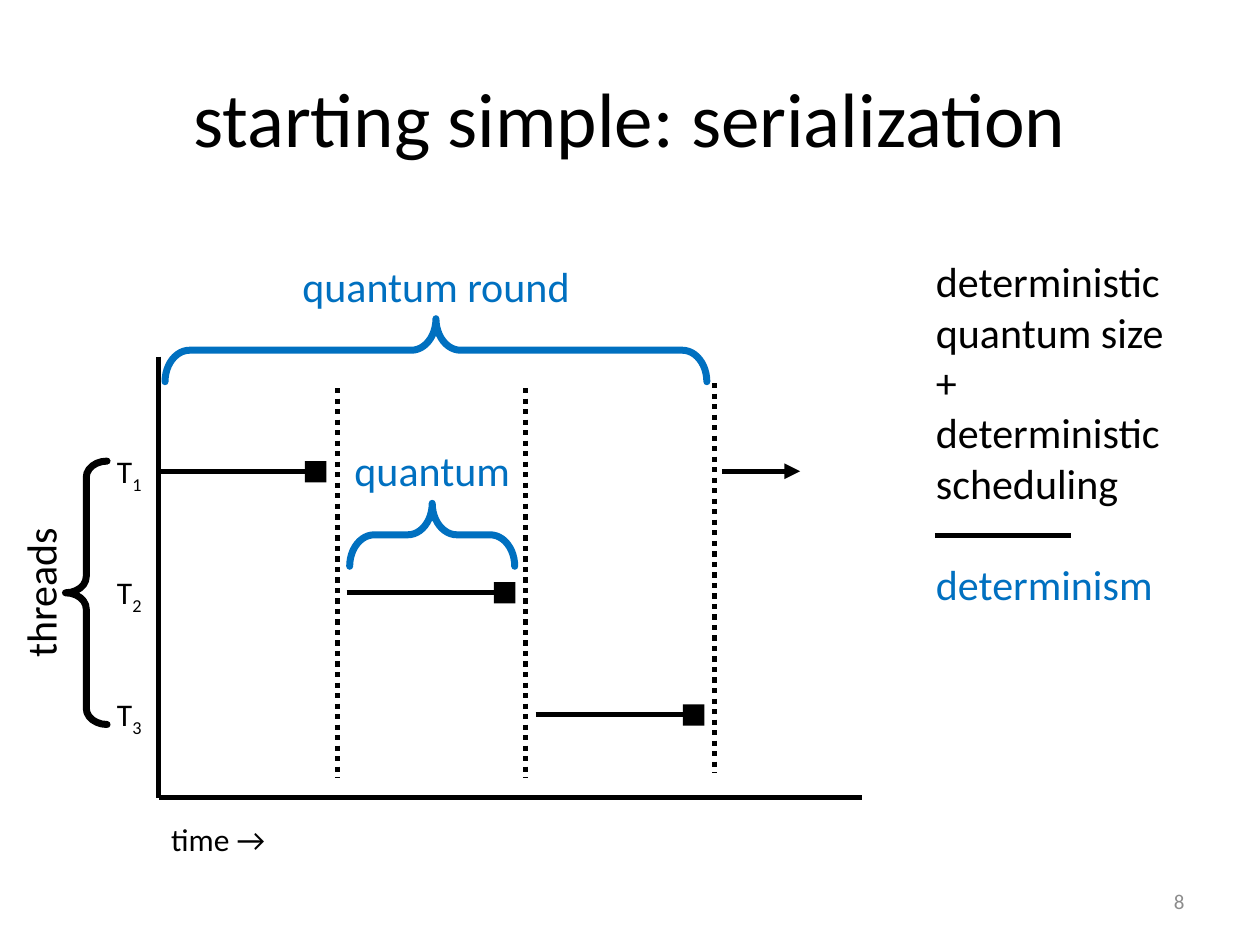
from lxml import etree
from pptx import Presentation
from pptx.dml.color import RGBColor
from pptx.enum import shapes, text
from pptx.oxml.ns import qn
from pptx.util import Pt

SCALE = 9144
BLACK = RGBColor(0x00, 0x00, 0x00)
BLUE = RGBColor(0x00, 0x70, 0xC0)
GRAY = RGBColor(0x8C, 0x8C, 0x8C)
LEFT, MID, RIGHT = text.PP_ALIGN.LEFT, text.PP_ALIGN.CENTER, text.PP_ALIGN.RIGHT


def px(*vals):
    return [val * SCALE for val in vals]


def put(obj, vals):
    for name, val in vals.items():
        setattr(obj, name, val)


class Deck:
    font = "Calibri"

    def __init__(self, wide, high):
        self.prs = Presentation()
        put(self.prs, dict(zip(("slide_width", "slide_height"), px(wide, high))))
        self.slide = self.prs.slides.add_slide(self.prs.slide_layouts[5])
        self.items = self.slide.shapes

    def run(self, para, words, size, color, base=None):
        run = para.add_run()
        run.text = words
        put(run.font, {"name": self.font, "size": Pt(size)})
        run.font.color.rgb = color
        if base:
            run.font._element.set("baseline", str(base))

    def title(self, words, *box):
        shape = self.items.title
        put(shape, dict(zip(("left", "top", "width", "height"), px(*box))))
        shape.text_frame.vertical_anchor = text.MSO_ANCHOR.MIDDLE
        para = shape.text_frame.paragraphs[0]
        para.alignment = MID
        self.run(para, words, 44, BLACK)

    def label(self, box, paras, size, wrap=False, align=LEFT, anchor=text.MSO_ANCHOR.TOP):
        frame = self.items.add_textbox(*px(*box)).text_frame
        put(frame, {"word_wrap": wrap, "vertical_anchor": anchor})
        for num, (words, color, gap, sub) in enumerate(paras):
            para = frame.add_paragraph() if num else frame.paragraphs[0]
            put(para, {"alignment": align, "space_before": Pt(gap)})
            self.run(para, words, size, color)
            if sub:
                self.run(para, sub, size, color, -25000)

    def line(self, x1, y1, x2, y2, dash=None, tail=None):
        line = self.items.add_connector(shapes.MSO_CONNECTOR.STRAIGHT, *px(x1, y1, x2, y2))
        line.line.color.rgb = BLACK
        line.line.width = Pt(3)
        edge = line.line._get_or_add_ln()
        if dash:
            etree.SubElement(edge, qn("a:prstDash")).set("val", dash)
        if tail:
            etree.SubElement(edge, qn("a:tailEnd")).set("type", tail)
        etree.SubElement(line._element.spPr, qn("a:effectLst"))

    def square(self, *box):
        shape = self.items.add_shape(shapes.MSO_SHAPE.RECTANGLE, *px(*box))
        shape.shadow.inherit = False
        shape.fill.solid()
        shape.fill.fore_color.rgb = BLACK
        shape.line.fill.background()

    def brace(self, words, box, color, inset, turn=0):
        shape = self.items.add_shape(shapes.MSO_SHAPE.LEFT_BRACE, *px(*box))
        shape.shadow.inherit = False
        shape.rotation = turn
        shape.adjustments[0] = 0.39
        shape.fill.background()
        shape.line.color.rgb = color
        shape.line.width = Pt(4)
        shape.line._get_or_add_ln().set("cap", "rnd")
        frame = shape.text_frame
        names = ("margin_left", "margin_top", "margin_right", "margin_bottom")
        put(frame, dict(zip(names, px(10, 5, inset, 5))))
        put(frame, {"word_wrap": False, "vertical_anchor": text.MSO_ANCHOR.MIDDLE})
        frame._txBody.bodyPr.set("vert", "vert270")
        para = frame.paragraphs[0]
        para.alignment = MID
        self.run(para, words, 24, color)


def main():
    deck = Deck(1000, 750)
    deck.title("starting simple: serialization", 50, 30, 900, 125)

    deck.brace("quantum", (318, 359, 50, 131), BLUE, 140, 90)
    deck.brace("quantum round", (321, 63, 50, 430), BLUE, 140, 90)
    deck.brace("threads", (52, 366, 33, 209), BLACK, 100)

    for num, y in enumerate((374, 470, 567)):
        x = 125 + 150 * num
        deck.line(x, y, x + 125, y)
        deck.square(x + 117, y - 8, 17, 17)
        deck.label((83, y - 20, 42, 40), [("T", BLACK, 0, str(num + 1))], 18)

    for x, y in ((268, 308), (417, 308), (567, 304)):
        deck.line(x, y, x, y + 309, dash="sysDot")
    deck.line(573, 374, 635, 374, tail="triangle")

    deck.line(126, 283, 126, 633)
    deck.line(126, 633, 684, 633)
    deck.label((126, 646, 101, 40), [("time →", BLACK, 0, "")], 18)

    deck.label((733, 198, 233, 293), [
        ("deterministic quantum size", BLACK, 0, ""),
        ("+", BLACK, 0, ""),
        ("deterministic scheduling", BLACK, 0, ""),
        ("determinism", BLUE, 29, ""),
    ], 24, wrap=True)
    deck.line(742, 425, 850, 425)

    deck.label((717, 695, 233, 40), [("8", GRAY, 0, "")], 12, True, RIGHT,
               text.MSO_ANCHOR.MIDDLE)
    deck.prs.save("out.pptx")


if __name__ == "__main__":
    main()
